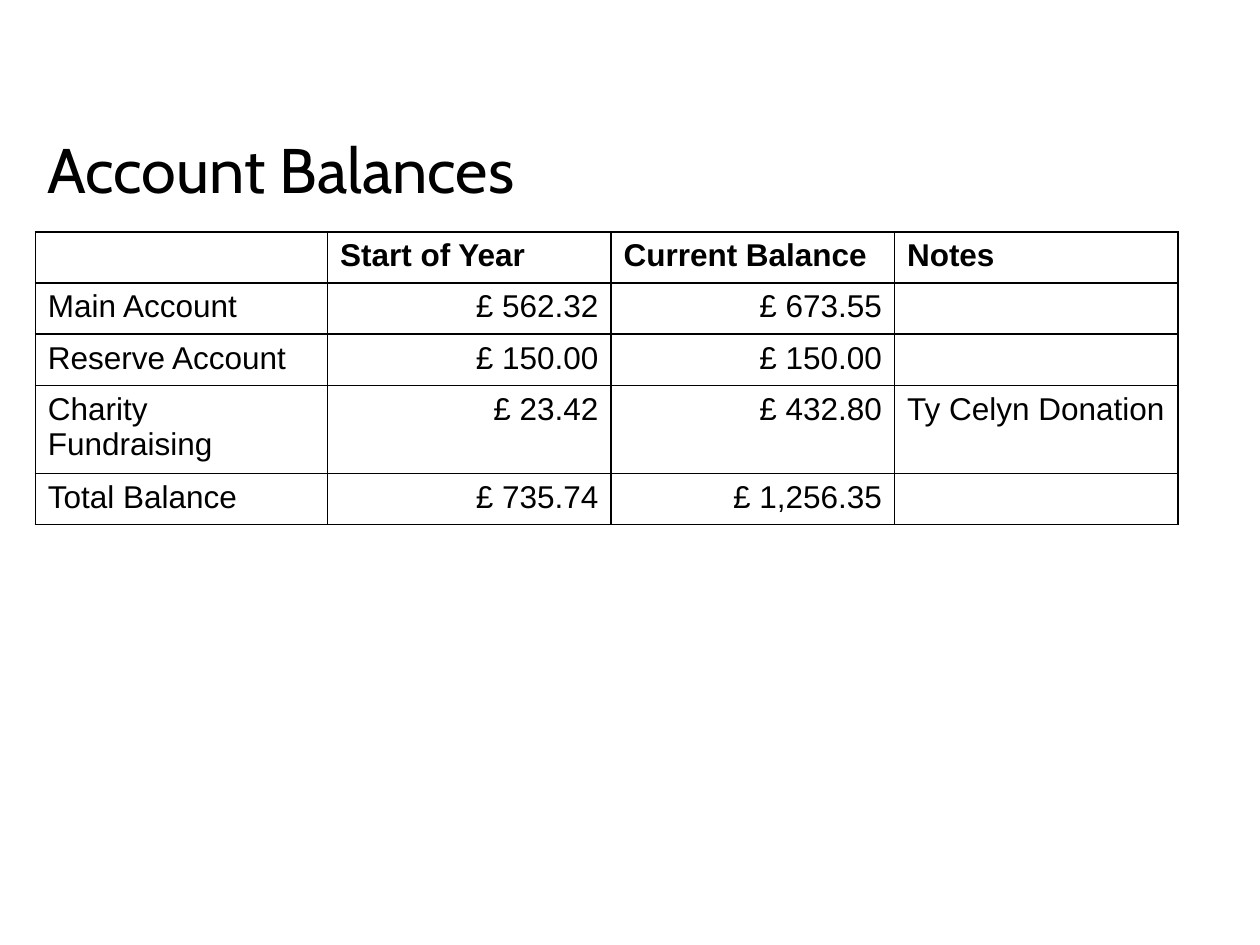
from dataclasses import dataclass

from lxml import etree
from pptx import Presentation
from pptx import util as u
from pptx.dml.color import RGBColor
from pptx.enum import text
from pptx.oxml import ns

Pt = u.Pt


@dataclass(frozen=True)
class Theme:
    ink: str = "000000"
    paper: str = "FFFFFF"
    head: str = "Cabin"
    body: str = "Arial"
    big: float = 36
    size: float = 18
    rule: float = 1


@dataclass(frozen=True)
class Entry:
    name: str
    start: str
    now: str
    note: str = ""


THEME = Theme()
LEFT = 20.16
WIDTHS = (167, 162, 162, 162)
ROW = 29.25
HEADS = ("", "Start of Year", "Current Balance", "Notes")
ENTRIES = (
    Entry("Main Account", "£ 562.32", "£ 673.55"),
    Entry("Reserve Account", "£ 150.00", "£ 150.00"),
    Entry("Charity Fundraising", "£ 23.42", "£ 432.80", "Ty Celyn Donation"),
    Entry("Total Balance", "£ 735.74", "£ 1,256.35"),
)


def style(para, face: str, size: float, bold: bool = False) -> None:
    font = para.font
    font.name, font.size, font.bold = face, Pt(size), bold
    font.color.rgb = RGBColor.from_string(THEME.ink)


def border(cell) -> None:
    """Rule all four sides; the lines must come before the cell's fill."""
    props = cell._tc.get_or_add_tcPr()
    for spot, side in enumerate(("lnL", "lnR", "lnT", "lnB")):
        line = etree.Element(ns.qn(f"a:{side}"), w=str(Pt(THEME.rule)))
        fill = etree.SubElement(line, ns.qn("a:solidFill"))
        etree.SubElement(fill, ns.qn("a:srgbClr"), val=THEME.ink)
        props.insert(spot, line)


def write(cell, words: str, bold: bool, right: bool) -> None:
    cell.fill.solid()
    cell.fill.fore_color.rgb = RGBColor.from_string(THEME.paper)
    border(cell)
    cell.text = words
    para = cell.text_frame.paragraphs[0]
    style(para, THEME.body, THEME.size, bold)
    if right:
        para.alignment = text.PP_ALIGN.RIGHT


def title(slide, words: str) -> None:
    box = slide.shapes.add_textbox(Pt(LEFT), Pt(71.28), Pt(648), Pt(90))
    frame = box.text_frame
    frame.word_wrap = True
    frame.text = words
    style(frame.paragraphs[0], THEME.head, THEME.big)


def ledger(slide) -> None:
    rows = [HEADS] + [(e.name, e.start, e.now, e.note) for e in ENTRIES]
    grid = slide.shapes.add_table(
        len(rows), len(WIDTHS), Pt(LEFT), Pt(132.48),
        Pt(sum(WIDTHS)), Pt(ROW * len(rows))).table
    grid.first_row = grid.horz_banding = False
    for col, width in zip(grid.columns, WIDTHS):
        col.width = Pt(width)
    for r, row in enumerate(rows):
        grid.rows[r].height = Pt(ROW)
        for c, words in enumerate(row):
            write(grid.cell(r, c), words, r == 0, r > 0 and c in (1, 2))


def main() -> None:
    deck = Presentation()
    deck.slide_width, deck.slide_height = Pt(720), Pt(540)
    slide = deck.slides.add_slide(deck.slide_layouts[6])
    title(slide, "Account Balances")
    ledger(slide)
    deck.save("out.pptx")


if __name__ == "__main__":
    main()
